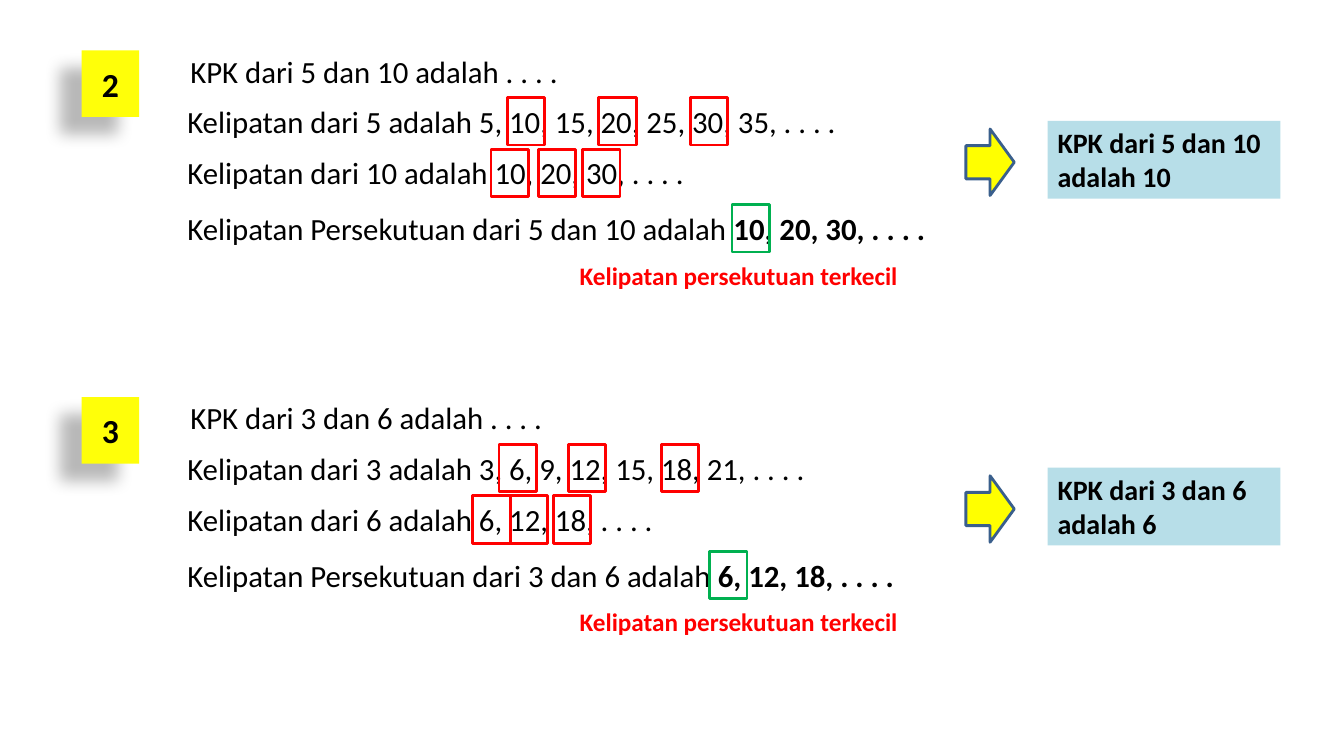
from lxml import etree
from pptx import Presentation
from pptx.dml.color import RGBColor
from pptx.enum.shapes import MSO_SHAPE
from pptx.enum.text import MSO_ANCHOR, MSO_AUTO_SIZE, PP_ALIGN
from pptx.oxml.ns import qn
from pptx.util import Inches, Pt

RECTANGLE, ARROW = MSO_SHAPE.RECTANGLE, MSO_SHAPE.RIGHT_ARROW
TOP, MIDDLE = MSO_ANCHOR.TOP, MSO_ANCHOR.MIDDLE
LEFT, CENTER = PP_ALIGN.LEFT, PP_ALIGN.CENTER
FIT_SHAPE = MSO_AUTO_SIZE.SHAPE_TO_FIT_TEXT

BLACK, RED, GREEN = "000000", "FF0000", "00B050"
YELLOW, BADGE_YELLOW = "FFFF00", "FFFF09"
BLUE, ARROW_BLUE = "B7DEE8", "3A5F8C"
LINE_HEIGHT = 0.47
FRAME_WIDTH = 0.37
EXERCISE_PITCH = 3.44


def color(value):
    return RGBColor.from_string(value)


class SlideBuilder:
    font_name = "Calibri"

    def __init__(self, page):
        self.page = page

    def style(self, span, size, ink, bold):
        span.font.name = self.font_name
        span.font.size = Pt(size)
        span.font.color.rgb = color(ink)
        span.font.bold = bold

    def text(self, left, top, width, content, bold_tail="", size=22,
             ink=BLACK, bold=False, height=LINE_HEIGHT):
        box = self.page.shapes.add_textbox(
            Inches(left), Inches(top), Inches(width), Inches(height))
        frame = box.text_frame
        frame.word_wrap = False
        frame.auto_size = FIT_SHAPE
        para = frame.paragraphs[0]
        para.text = content
        self.style(para.runs[0], size, ink, bold)
        if bold_tail:
            span = para.add_run()
            span.text = bold_tail
            self.style(span, size, ink, True)

    def shape(self, kind, left, top, width, height, fill=None, line=None):
        box = self.page.shapes.add_shape(
            kind, Inches(left), Inches(top), Inches(width), Inches(height))
        box.shadow.inherit = False
        if fill:
            box.fill.solid()
            box.fill.fore_color.rgb = color(fill)
        else:
            box.fill.background()
        if line:
            box.line.color.rgb = color(line)
            box.line.width = Pt(2)
        else:
            box.line.fill.background()
        return box

    def frame_number(self, left, top, line=RED):
        self.shape(RECTANGLE, left, top, FRAME_WIDTH, LINE_HEIGHT, line=line)

    def label(self, left, top, width, height, content, fill, size,
              align=LEFT, anchor=TOP):
        box = self.shape(RECTANGLE, left, top, width, height, fill)
        frame = box.text_frame
        frame.word_wrap = True
        frame.vertical_anchor = anchor
        para = frame.paragraphs[0]
        para.text = content
        para.alignment = align
        self.style(para.runs[0], size, BLACK, True)
        return box

    def badge(self, left, top, number):
        box = self.label(left, top, 0.57, 0.66, number, BADGE_YELLOW, 24,
                         CENTER, MIDDLE)
        # Soft shadow falling to the lower left
        effects = box.element.spPr.find(qn("a:effectLst"))
        shadow = etree.SubElement(
            effects, qn("a:outerShdw"), blurRad=str(Pt(11.8)),
            dist=str(Pt(19.7)), dir=str(141 * 60000), algn="ctr",
            rotWithShape="0")
        ink = etree.SubElement(shadow, qn("a:srgbClr"), val=BLACK)
        etree.SubElement(ink, qn("a:alpha"), val="28000")

    def exercise(self, offset, number, first, second, first_multiples,
                 second_multiples, common, answer, widths, first_frames,
                 second_frames, answer_frame):
        question = f"KPK dari {first} dan {second} adalah"
        question_top, first_top, second_top, common_top = (
            offset + top for top in (0.47, 0.97, 1.48, 2.03))

        # Question and lists of multiples
        self.text(1.79, question_top, widths[0], f"{question} . . . .")
        self.text(1.76, first_top, widths[1],
                  f"Kelipatan dari {first} adalah {first_multiples}, . . . .")
        self.text(1.76, second_top, widths[2],
                  f"Kelipatan dari {second} adalah {second_multiples}, . . . .")
        self.text(1.76, common_top, widths[3],
                  f"Kelipatan Persekutuan dari {first} dan {second} adalah ",
                  f"{common}, . . . .")

        # Frames around the common multiples and the smallest one
        for left in first_frames:
            self.frame_number(left, first_top)
        for left in second_frames:
            self.frame_number(left, second_top)
        self.frame_number(answer_frame, common_top, GREEN)
        self.text(5.65, offset + 2.53, 3.38, "Kelipatan persekutuan terkecil",
                  size=18, ink=RED, bold=True, height=0.4)

        # Conclusion and exercise number
        self.shape(ARROW, 9.58, offset + 1.28, 0.48, 0.66, YELLOW, ARROW_BLUE)
        self.label(10.39, offset + 1.2, 2.31, 0.77, f"{question} {answer}",
                   BLUE, 20)
        self.badge(0.81, offset + 0.5, number)


def main():
    deck = Presentation()
    deck.slide_width, deck.slide_height = Inches(13.33), Inches(7.5)
    builder = SlideBuilder(deck.slides.add_slide(deck.slide_layouts[6]))

    builder.exercise(
        0, "2", 5, 10, "5, 10, 15, 20, 25, 30, 35", "10, 20, 30",
        "10, 20, 30", 10, widths=(3.88, 6.7, 5.25, 7.59),
        first_frames=(5.03, 5.94, 6.85), second_frames=(4.87, 5.34, 5.78),
        answer_frame=7.26)
    builder.exercise(
        EXERCISE_PITCH, "3", 3, 6, "3, 6, 9, 12, 15, 18, 21", "6, 12, 18",
        "6, 12, 18", 6, widths=(3.72, 6.46, 5.01, 7.28),
        first_frames=(4.95, 5.64, 6.56), second_frames=(4.69, 5.06, 5.49),
        answer_frame=7.04)

    deck.save("out.pptx")


if __name__ == "__main__":
    main()
